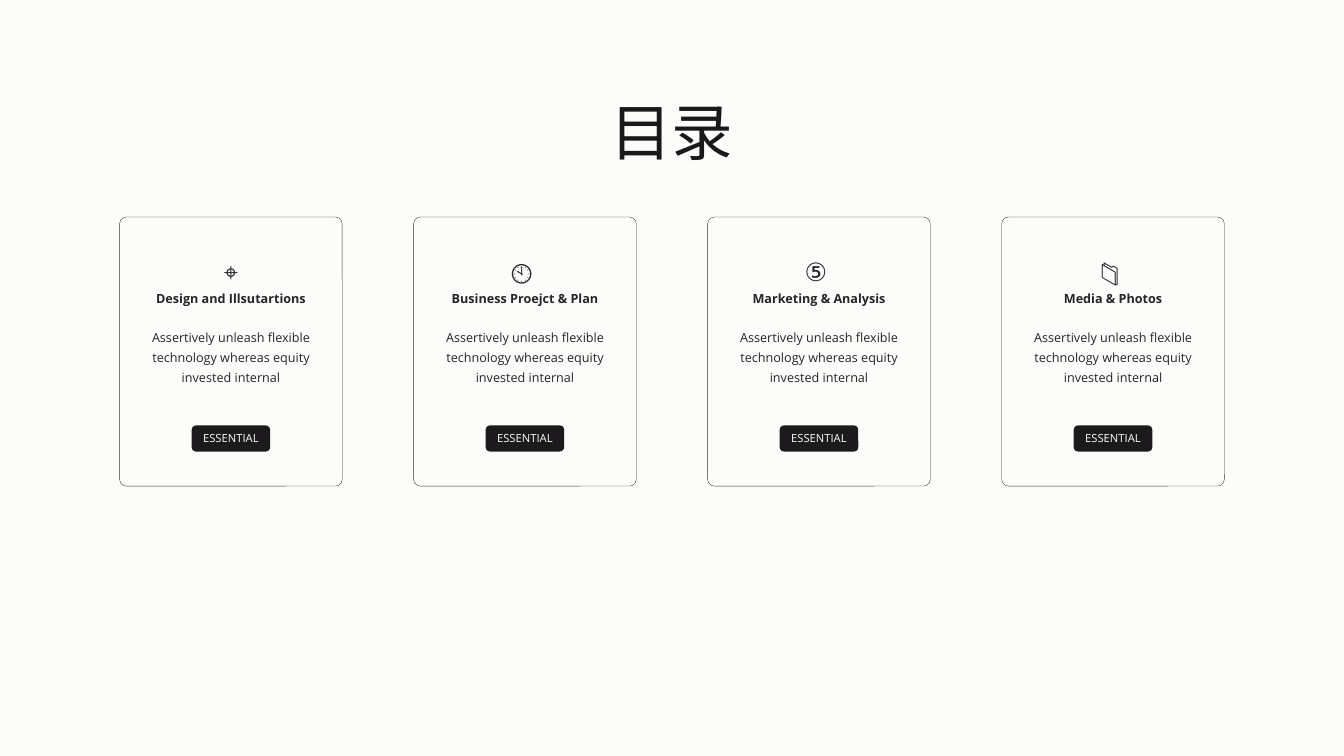
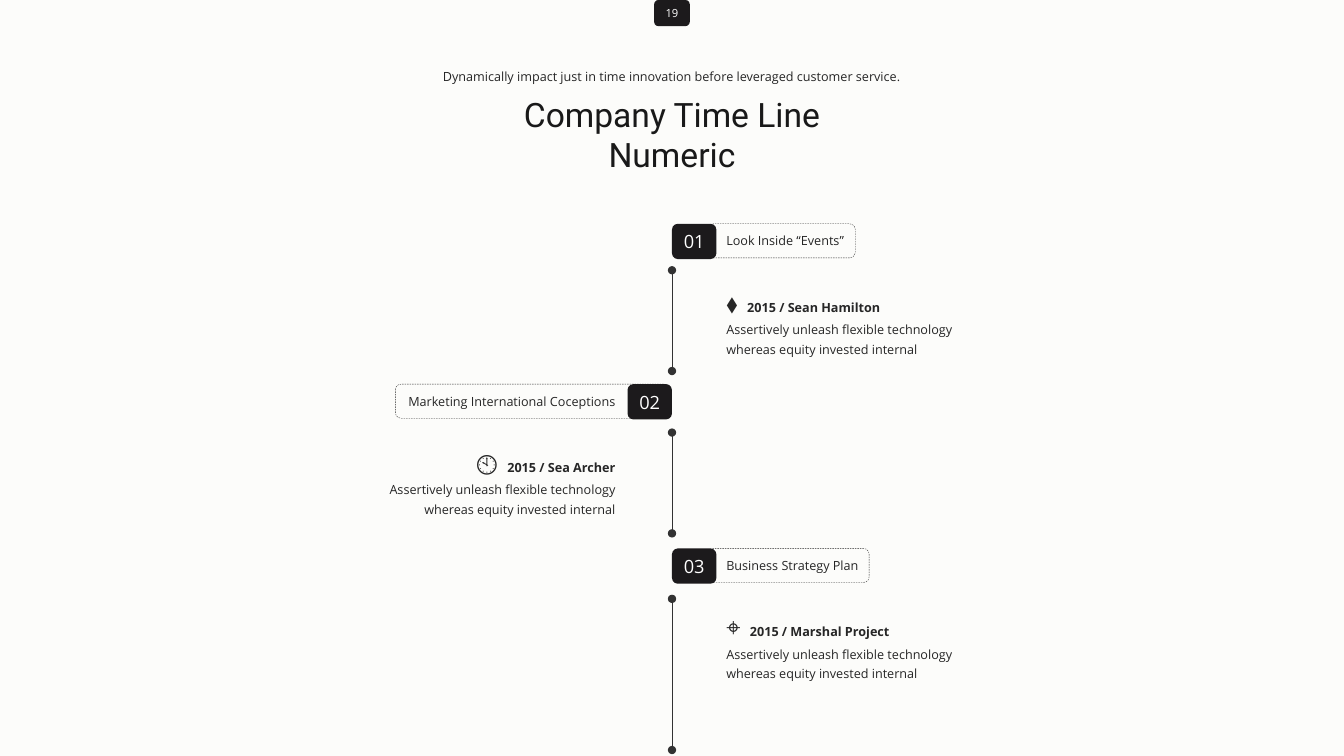
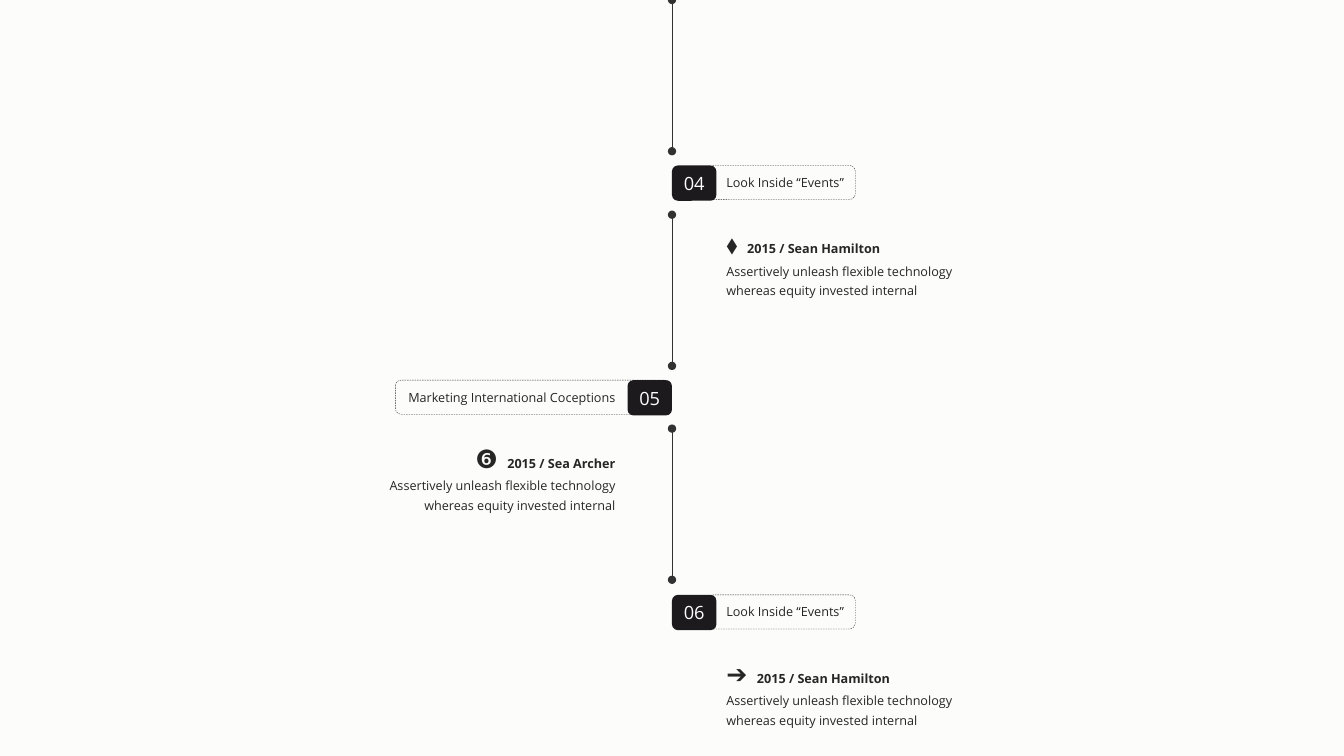
from lxml.etree import SubElement
from pptx import Presentation
from pptx.dml.color import RGBColor
from pptx.enum.dml import MSO_LINE
from pptx.enum.shapes import MSO_CONNECTOR, MSO_SHAPE
from pptx.enum.text import MSO_ANCHOR as Anchor, MSO_AUTO_SIZE as Auto, PP_ALIGN as Align
from pptx.oxml.ns import qn
from pptx.util import Cm, Pt

# Shared style
PAPER = RGBColor(0xFC, 0xFC, 0xFA)
INK = RGBColor(0x26, 0x26, 0x26)
HEAD = RGBColor(0x19, 0x19, 0x19)
DARK = RGBColor(0x1C, 0x1A, 0x1C)
GREY = RGBColor(0x32, 0x32, 0x32)
WHITE = RGBColor(0xFF, 0xFF, 0xFF)
SANS, ROBOTO = "Open Sans", "Roboto"
WIDE, HIGH = 33.87, 19.05
MID = WIDE / 2

# Content
BLURB = "Assertively unleash flexible technology whereas equity invested internal"
CARDS = [
    ("⌖", "Design and Illsutartions"),
    ("🕙 ", "Business Proejct & Plan"),
    ("⑤ ", "Marketing & Analysis"),
    ("📁 ", "Media & Photos"),
]
TAGLINE = "Dynamically impact just in time innovation before leveraged customer service."
# Each step: number, side, top, label, label width, icon, heading
FIRST = [
    ("01", "right", 5.64, "Look Inside “Events”", 3.51, "⬧", "2015 / Sean Hamilton"),
    ("02", "left", 9.68, "Marketing International Coceptions", 5.74, "🕙", "2015 / Sea Archer"),
    ("03", "right", 13.82, "Business Strategy Plan", 3.86, "⌖", "2015 / Marshal Project"),
]
SECOND = [
    ("04", "right", 4.17, "Look Inside “Events”", 3.51, "⬧", "2015 / Sean Hamilton"),
    ("05", "left", 9.58, "Marketing International Coceptions", 5.74, "❻", "2015 / Sea Archer"),
    ("06", "right", 14.99, "Look Inside “Events”", 3.51, "➔", "2015 / Sean Hamilton"),
]
# Top and bottom of each stretch of the line
FIRST_LINES = [(6.81, 9.35), (10.9, 13.44), (15.09, 18.9)]
SECOND_LINES = [(0, 3.81), (5.41, 9.22), (10.8, 14.61)]


def style(font, size, color=INK, name=SANS, bold=False):
    font.size, font.name, font.bold = Pt(size), name, bold
    font.color.rgb = color


def write(para, text, size, align, **look):
    para.text, para.alignment = text, align
    style(para.font, size, **look)


def text_box(slide, x, y, w, h, wrap=True):
    frame = slide.shapes.add_textbox(Cm(x), Cm(y), Cm(w), Cm(h)).text_frame
    frame.word_wrap, frame.auto_size = wrap, Auto.SHAPE_TO_FIT_TEXT
    return frame


def round_box(slide, x, y, w, h):
    box = slide.shapes.add_shape(
        MSO_SHAPE.ROUNDED_RECTANGLE, Cm(x), Cm(y), Cm(w), Cm(h))
    box.shadow.inherit = False
    return box


def outline(slide, x, y, w, h, color):
    box = round_box(slide, x, y, w, h)
    box.fill.background()
    box.line.color.rgb, box.line.width = color, Pt(0.25)
    return box


def badge(slide, x, y, w, h, text, size):
    box = round_box(slide, x, y, w, h)
    box.fill.solid()
    box.fill.fore_color.rgb = DARK
    box.line.fill.background()
    frame = box.text_frame
    frame.word_wrap, frame.vertical_anchor = False, Anchor.MIDDLE
    write(frame.paragraphs[0], text, size, Align.CENTER, color=WHITE)


def set_title(slide, text, size, h):
    title, w = slide.shapes.title, 9.58
    title.left, title.top = Cm(MID - w / 2), Cm(2.24)
    title.width, title.height = Cm(w), Cm(h)
    frame = title.text_frame
    frame.auto_size, frame.vertical_anchor = Auto.NONE, Anchor.TOP
    frame.word_wrap = True
    write(frame.paragraphs[0], text, size, Align.CENTER, color=HEAD, name=ROBOTO)


def draw_card(slide, x, icon, name):
    w, y = 5.61, 5.47
    outline(slide, x, y, w, 6.78, GREY).adjustments[0] = 0.03
    frame = text_box(slide, x + (w - 4.72) / 2, 6.1, 4.72, 3.76)
    lines = [
        (icon, 18, dict(name=ROBOTO)),
        (name, 9, dict(bold=True)),
        (BLURB, 9, {}),
    ]
    for i, (text, size, look) in enumerate(lines):
        para = frame.add_paragraph() if i else frame.paragraphs[0]
        write(para, text, size, Align.CENTER, **look)
        para.line_spacing = 1.3
    para.space_before = Pt(14)
    badge(slide, x + (w - 1.98) / 2, 10.72, 1.98, 0.66, "ESSENTIAL", 8)


def draw_step(slide, num, side, y, label, w, icon, name):
    if side == "right":
        align, tag = Align.LEFT, MID
        pill, pill_w = MID + 0.91, w + 0.2
        label_x = body_x = MID + 1.12
    else:
        align, tag, edge = Align.RIGHT, MID - 1.12, MID - 1.18
        pill, pill_w = edge - w - 0.05, w + 1.19
        label_x, body_x = edge - w, edge - 6.2
    outline(slide, pill, y, pill_w, 0.86, INK).line.dash_style = MSO_LINE.DASH
    badge(slide, tag, y, 1.12, 0.89, num, 13)
    frame = text_box(slide, label_x, y + 0.11, w, 0.64, wrap=False)
    write(frame.paragraphs[0], label, 9, align)

    # Icon with heading, then the blurb
    frame = text_box(slide, body_x, y + 1.24, 6.2, 2.26)
    top, body = frame.paragraphs[0], frame.add_paragraph()
    for text, size, font, bold in [(icon + " ", 18, ROBOTO, False),
                                   (" " + name, 9, SANS, True)]:
        run = top.add_run()
        run.text = text
        style(run.font, size, name=font, bold=bold)
    top.alignment = align
    write(body, BLURB, 9, align)
    top.line_spacing = body.line_spacing = 1.3


def draw_line(slide, start, end):
    line = slide.shapes.add_connector(
        MSO_CONNECTOR.STRAIGHT, Cm(MID), Cm(start), Cm(MID), Cm(end))
    line.line.color.rgb, line.line.width = GREY, Pt(0.25)
    for tag in ("a:headEnd", "a:tailEnd"):
        SubElement(line.line._get_or_add_ln(), qn(tag), type="oval")
    SubElement(line._element.spPr, qn("a:effectLst"))


def draw_steps(slide, steps, lines):
    for start, end in lines:
        draw_line(slide, start, end)
    for step in steps:
        draw_step(slide, *step)


def main():
    prs = Presentation()
    prs.slide_width, prs.slide_height = Cm(WIDE), Cm(HIGH)
    paper = prs.slide_master.background.fill
    paper.solid()
    paper.fore_color.rgb = PAPER
    titled, blank = prs.slide_layouts[5], prs.slide_layouts[6]

    # Contents
    slide = prs.slides.add_slide(titled)
    set_title(slide, "目录", 44, 2.13)
    pitch = 7.41
    left = (WIDE - pitch * (len(CARDS) - 1) - 5.61) / 2
    for i, card in enumerate(CARDS):
        draw_card(slide, left + i * pitch, *card)

    # Time line, first half
    slide = prs.slides.add_slide(titled)
    set_title(slide, "Company Time Line Numeric", 24, 2.3)
    frame = text_box(slide, MID - 6.1, 1.6, 12.17, 0.64)
    write(frame.paragraphs[0], TAGLINE, 9, Align.CENTER)
    badge(slide, MID - 0.45, 0, 0.9, 0.66, "19", 8)
    draw_steps(slide, FIRST, FIRST_LINES)

    # Time line, second half
    slide = prs.slides.add_slide(blank)
    draw_steps(slide, SECOND, SECOND_LINES)

    prs.save("out.pptx")


if __name__ == "__main__":
    main()
